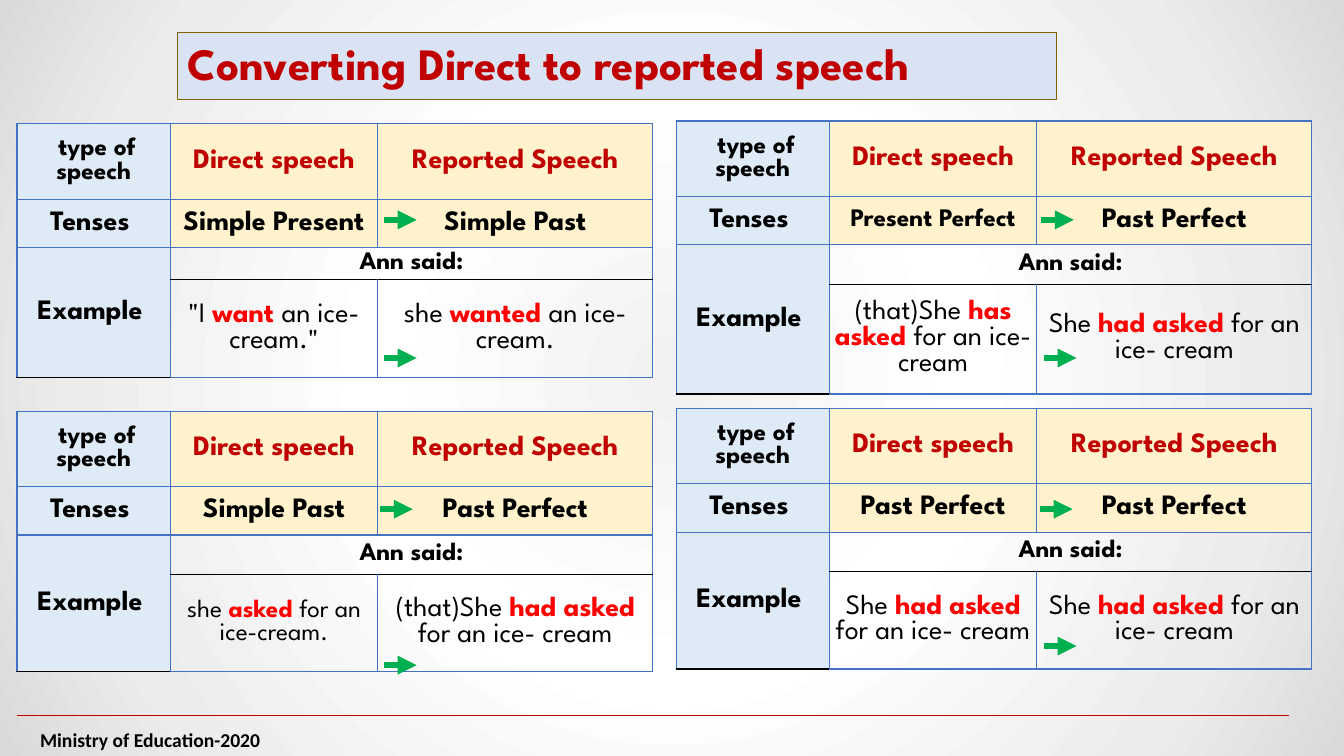
from dataclasses import dataclass
from itertools import product
from typing import NamedTuple

from lxml import etree
from pptx import Presentation
from pptx import util as u
from pptx.dml.color import RGBColor
from pptx.enum import shapes, text
from pptx.oxml import ns, parse_xml


@dataclass(frozen=True)
class Theme:
    font: str = "League Spartan"
    footer_font: str = "Calibri"
    red: str = "C00000"
    verb: str = "FF0000"
    black: str = "000000"
    green: str = "00B050"
    border: str = "4472C4"
    label_fill: str = "DEEBF7"
    head_fill: str = "FFF2CC"
    title_fill: str = "DAE3F3"
    title_line: str = "806000"
    backdrop: tuple = ((0, "F2F2F2"), (39, "FFFFFF"), (78, "ECECEC"), (100, "D9D9D9"))
    title_size: int = 32
    large: int = 20
    small: int = 18
    footer_size: int = 14


THEME = Theme()


class Sentence(NamedTuple):
    before: str
    verb: str
    after: str
    size: int = THEME.large


class Point(NamedTuple):
    x: float
    y: float


@dataclass(frozen=True)
class Conversion:
    corner: Point
    tenses: tuple[str, str]
    examples: tuple[Sentence, Sentence]
    arrows: tuple[Point, Point]
    said_height: float = 0.99
    example_height: float = 2.46
    direct_tense_size: int = THEME.large


COLUMNS = (3.86, 5.23, 6.93)
HEAD_HEIGHT, TENSE_HEIGHT = 1.9, 1.22
ARROW_LENGTH = 0.82
HAD_ASKED = Sentence("She ", "had asked ", "for an ice- cream")

CONVERSIONS = (
    Conversion(
        Point(0.43, 3.12), ("Simple Present", "Simple Past"),
        (Sentence('"I ', "want ", 'an ice-cream."'),
         Sentence("she ", "wanted ", "an ice-cream.")),
        (Point(9.68, 5.54), Point(9.68, 9.02)), said_height=0.81),
    Conversion(
        Point(0.43, 10.36), ("Simple Past", "Past Perfect"),
        (Sentence("she", " asked ", "for an ice-cream.", THEME.small),
         Sentence("(that)She ", "had asked ", "for an ice- cream")),
        (Point(9.58, 12.83), Point(9.68, 16.76))),
    Conversion(
        Point(17.04, 3.05), ("Present Perfect", "Past Perfect"),
        (Sentence("(that)She ", "has asked ", "for an ice- cream"), HAD_ASKED),
        (Point(26.24, 5.54), Point(26.31, 9.02)),
        example_height=2.77, direct_tense_size=THEME.small),
    Conversion(
        Point(17.04, 10.29), ("Past Perfect", "Past Perfect"),
        (HAD_ASKED, HAD_ASKED),
        (Point(26.21, 12.83), Point(26.31, 16.28))),
)


def rgb(colour: str) -> RGBColor:
    return RGBColor.from_string(colour)


def add_run(paragraph, words: str, size: int, colour: str = THEME.black,
            bold: bool = True, font: str = THEME.font) -> None:
    run = paragraph.add_run()
    run.text = words
    for name, value in {"name": font, "size": u.Pt(size), "bold": bold}.items():
        setattr(run.font, name, value)
    run.font.color.rgb = rgb(colour)


def add_line(slide, start: Point, end: Point, colour: str, width: float,
             arrow: bool = False) -> None:
    line = slide.shapes.add_connector(
        shapes.MSO_CONNECTOR.STRAIGHT, *(u.Cm(v) for v in (*start, *end)))
    line.line.color.rgb = rgb(colour)
    line.line.width = u.Pt(width)
    if arrow:
        etree.SubElement(line.line._get_or_add_ln(), ns.qn("a:tailEnd"), type="triangle")
    etree.SubElement(line._element.spPr, ns.qn("a:effectLst"))


def set_borders(cell, **colours: str) -> None:
    properties = cell._tc.get_or_add_tcPr()
    for side in "LRTB":
        properties.append(parse_xml(
            f'<a:ln{side} {ns.nsdecls("a")} w="12700"><a:solidFill>'
            f'<a:srgbClr val="{colours.get(side, THEME.border)}"/>'
            f'</a:solidFill></a:ln{side}>'))


def format_cell(cell, fill: str | None) -> None:
    if fill:
        cell.fill.solid()
        cell.fill.fore_color.rgb = rgb(fill)
    else:
        cell.fill.background()
    layout = {"vertical_anchor": text.MSO_ANCHOR.MIDDLE,
              **{f"margin_{side}": u.Cm(0.1) for side in ("left", "right", "top", "bottom")}}
    for name, value in layout.items():
        setattr(cell, name, value)
    cell.text_frame.paragraphs[0].alignment = text.PP_ALIGN.CENTER


def add_conversion(slide, conversion: Conversion) -> None:
    heights = (HEAD_HEIGHT, TENSE_HEIGHT, conversion.said_height, conversion.example_height)
    frame = slide.shapes.add_table(
        4, 3, *(u.Cm(v) for v in (*conversion.corner, sum(COLUMNS), sum(heights))))
    table = frame.table
    table.first_row = table.horz_banding = False
    for column, width in zip(table.columns, COLUMNS):
        column.width = u.Cm(width)
    for row, height in zip(table.rows, heights):
        row.height = u.Cm(height)

    # Grid: labels on the left, tinted heads, plain examples
    for row, col in product(range(4), range(3)):
        cell = table.cell(row, col)
        edges = {}
        if row == 3:
            edges = {"B": THEME.black} if col == 0 else {"T": THEME.black}
        elif row == 2:
            edges = {"B": THEME.black}
        set_borders(cell, **edges)
        head = THEME.head_fill if row < 2 else None
        format_cell(cell, THEME.label_fill if col == 0 else head)
    table.cell(2, 0).merge(table.cell(3, 0))
    table.cell(2, 1).merge(table.cell(2, 2))
    table.cell(0, 2).margin_left = table.cell(0, 2).margin_right = u.Cm(0.2)

    # Headings, tenses and labels
    direct, reported = conversion.tenses
    entries = {
        (0, 0): (" type of speech", THEME.small),
        (0, 1): ("Direct speech", THEME.large, THEME.red),
        (0, 2): ("Reported Speech", THEME.large, THEME.red),
        (1, 0): ("Tenses ", THEME.large),
        (1, 1): (direct, conversion.direct_tense_size),
        (1, 2): (reported, THEME.large),
        (2, 0): ("Example ", THEME.large),
        (2, 1): ("Ann said:", THEME.small),
    }
    for place, entry in entries.items():
        add_run(table.cell(*place).text_frame.paragraphs[0], *entry)

    # Example sentences with the verb picked out
    for col, sentence in enumerate(conversion.examples, start=1):
        paragraph = table.cell(3, col).text_frame.paragraphs[0]
        add_run(paragraph, sentence.before, sentence.size, bold=False)
        add_run(paragraph, sentence.verb, sentence.size, THEME.verb)
        add_run(paragraph, sentence.after, sentence.size, bold=False)

    for start in conversion.arrows:
        add_line(slide, start, Point(start.x + ARROW_LENGTH, start.y), THEME.green, 4.5, arrow=True)


def set_backdrop(slide) -> None:
    stops = "".join(f'<a:gs pos="{place * 1000}"><a:srgbClr val="{colour}"/></a:gs>'
                    for place, colour in THEME.backdrop)
    slide._element.cSld.insert(0, parse_xml(
        f'<p:bg {ns.nsdecls("p", "a")}><p:bgPr><a:gradFill><a:gsLst>{stops}</a:gsLst>'
        '<a:path path="circle"><a:fillToRect l="50000" t="50000" r="50000" b="50000"/>'
        '</a:path></a:gradFill><a:effectLst/></p:bgPr></p:bg>'))


def add_heading(slide) -> None:
    heading = slide.shapes.title
    box = {"left": 4.47, "top": 0.81, "width": 22.15, "height": 1.7}
    for name, value in box.items():
        setattr(heading, name, u.Cm(value))
    heading.fill.solid()
    heading.fill.fore_color.rgb = rgb(THEME.title_fill)
    heading.line.color.rgb = rgb(THEME.title_line)
    heading.line.width = u.Pt(0.75)
    frame = heading.text_frame
    for name, value in {"word_wrap": True, "auto_size": text.MSO_AUTO_SIZE.NONE,
                        "vertical_anchor": text.MSO_ANCHOR.MIDDLE}.items():
        setattr(frame, name, value)
    paragraph = frame.paragraphs[0]
    paragraph.alignment = text.PP_ALIGN.LEFT
    paragraph.line_spacing = 0.9
    add_run(paragraph, "Converting Direct to reported speech", THEME.title_size, THEME.red)


def add_footer(slide) -> None:
    add_line(slide, Point(0.43, 18.03), Point(32.49, 18.03), THEME.red, 0.5)
    ministry = slide.shapes.add_textbox(*(u.Cm(v) for v in (0.76, 18.21, 8.23, 0.86)))
    ministry.text_frame.word_wrap = True
    ministry.text_frame.auto_size = text.MSO_AUTO_SIZE.SHAPE_TO_FIT_TEXT
    add_run(ministry.text_frame.paragraphs[0], "Ministry of Education-2020",
            THEME.footer_size, font=THEME.footer_font)


def main() -> None:
    deck = Presentation()
    deck.slide_width, deck.slide_height = u.Cm(33.87), u.Cm(19.05)
    slide = deck.slides.add_slide(deck.slide_layouts[5])
    set_backdrop(slide)
    add_heading(slide)
    for conversion in CONVERSIONS:
        add_conversion(slide, conversion)
    add_footer(slide)
    deck.save("out.pptx")


if __name__ == "__main__":
    main()
